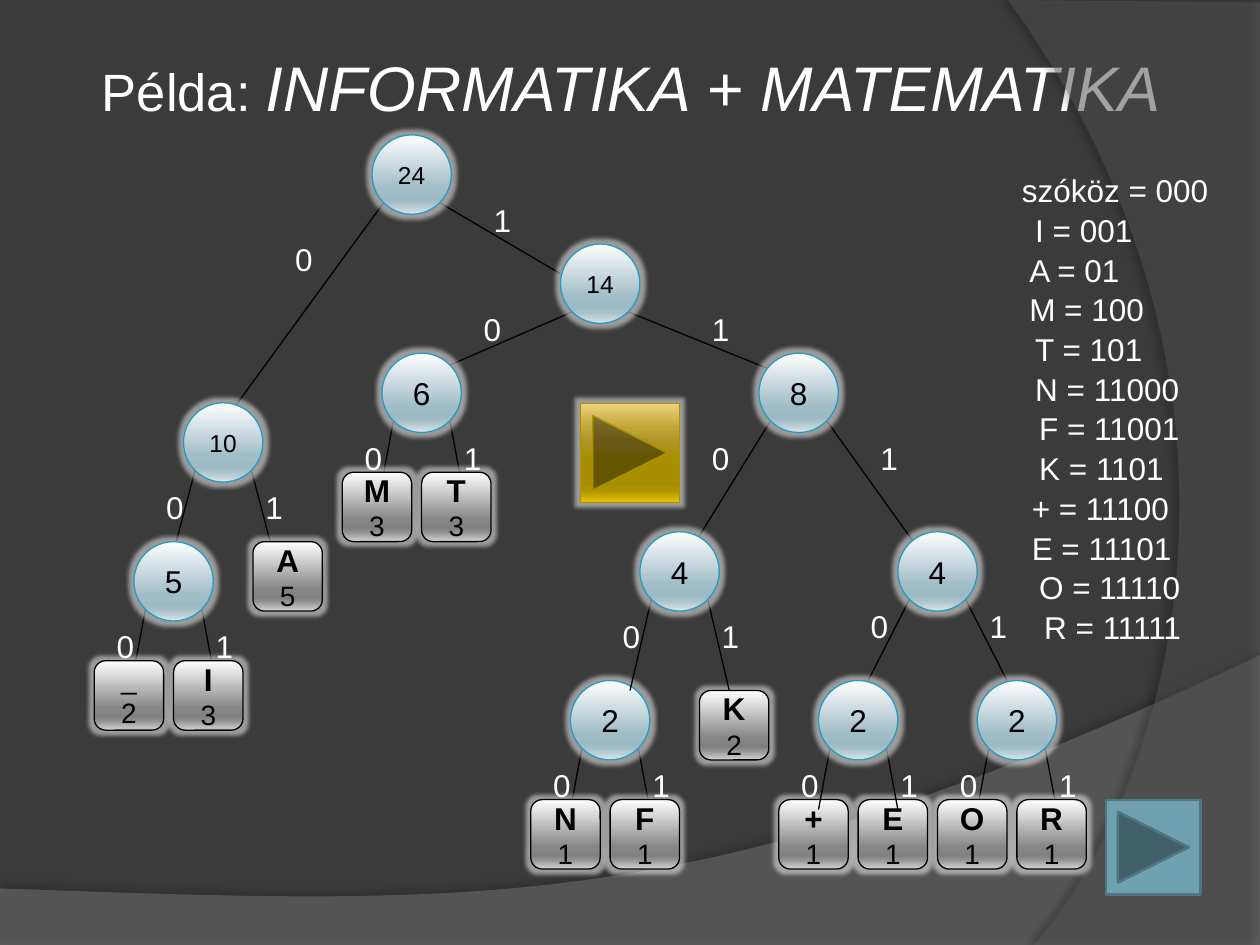
from dataclasses import dataclass

from pptx import Presentation
from pptx.dml.color import RGBColor
from pptx.enum import shapes, text
from pptx.oxml import parse_xml
from pptx.oxml.ns import nsdecls, qn
from pptx.util import Cm, Pt

FONT = "Arial"
BLACK = RGBColor(0x00, 0x00, 0x00)
WHITE = RGBColor(0xFF, 0xFF, 0xFF)
BACKDROP = RGBColor(0x3B, 0x3B, 0x3B)
WAVE_GREY = RGBColor(0x7F, 0x7F, 0x7F)
ARC_GREY = RGBColor(0x5E, 0x5E, 0x5E)
NODE_EDGE = RGBColor(0x23, 0x9B, 0xC2)
TEAL = RGBColor(0x6E, 0xA0, 0xB0)
TEAL_EDGE = RGBColor(0x51, 0x76, 0x82)
GOLD_EDGE = RGBColor(0xAB, 0x92, 0x00)


def ramp(*stops):
    return [(position, RGBColor.from_string(color)) for position, color in stops]


NODE_RAMP = ramp((0, "FEFEFE"), (68, "A0BCC6"), (81, "9CB9C4"), (86, "A7C0C9"), (100, "DAE4E7"))
LEAF_RAMP = ramp((0, "FEFEFE"), (68, "878787"), (81, "818181"), (86, "909090"), (100, "D3D3D3"))
GOLD_RAMP = ramp((0, "EED27E"), (25, "BFA536"), (38, "AF9527"), (55, "A88F00"),
                 (80, "A68D00"), (88, "AF9500"), (100, "E6C100"))

NODE_SIZE = 1.6
LEAF_SIZE = 1.4
EDGE_STARTS = ((0.23, 1.37), (1.37, 1.37))
CODES = [
    ("szóköz = 000", 20.35), ("I = 001", 20.62), ("A = 01", 20.5), ("M = 100", 20.5),
    ("T = 101", 20.62), ("N = 11000", 20.62), ("F = 11001", 20.7), ("K = 1101", 20.7),
    ("+ = 11100", 20.55), ("E = 11101", 20.55), ("O = 11110", 20.7), ("R = 11111", 20.8),
]


@dataclass
class Leaf:
    letter: str
    count: str
    offset: tuple
    entry: tuple = (0.8, 0.2)


@dataclass
class Node:
    count: str
    offset: tuple
    children: tuple
    entry: tuple = (0.8, 0.2)
    bits: tuple = ((-0.6, 1.6), (1.4, 1.6))
    edges_on_top: bool = False


def leaf_pair(left, right):
    return Leaf(*left, (-0.8, 2.4)), Leaf(*right, (0.8, 2.4))


def huffman_tree():
    five = Node("5", (-1, 2.8), leaf_pair("_2", "I3"))
    ten = Node("10", (-3.8, 5.4), (five, Leaf("A", "5", (1.4, 2.8), (0.4, 0.2))), (0.8, 0.4))
    six = Node("6", (-3.6, 2.2), leaf_pair("M3", "T3"), (1, 0.4))
    n_f = Node("2", (-1.4, 3), leaf_pair("N1", "F1"), (1.2, 0.2))
    left_four = Node("4", (-2.4, 3.6), (n_f, Leaf("K", "2", (1.2, 3.2), (0.6, 0))),
                     (1, 0.4), edges_on_top=True)
    plus_e = Node("2", (-1.6, 3), leaf_pair("+1", "E1"), (1, 0), edges_on_top=True)
    o_r = Node("2", (1.6, 3), leaf_pair("O1", "R1"), (0.6, 0))
    right_four = Node("4", (2.8, 3.6), (plus_e, o_r), (0.6, 0.6), ((-0.8, 1.4), (1.6, 1.4)))
    eight = Node("8", (4, 2.2), (left_four, right_four), (0.4, 0.4), ((-1.2, 1.6), (2.2, 1.6)))
    fourteen = Node("14", (3.8, 2.2), (six, eight), (0, 0.6), ((-1.8, 1.2), (2.8, 1.2)))
    return Node("24", (7.5, 2.72), (ten, fourteen), bits=((-1.8, 2), (2.2, 1.2)))


def shift(origin, offset):
    return origin[0] + offset[0], origin[1] + offset[1]


def add_run(paragraph, words, size, color, bold=False, italic=False):
    run = paragraph.add_run()
    run.text = words
    run.font.name = FONT
    run.font.size = Pt(size)
    run.font.bold = bold
    run.font.italic = italic
    run.font.color.rgb = color


def add_effect(shape, xml):
    shape.shadow.inherit = False
    shape.element.spPr.find(qn("a:effectLst")).append(parse_xml(xml))


def add_glow(shape):
    add_effect(shape, f'<a:glow {nsdecls("a")} rad="63500"><a:srgbClr val="{WHITE}">'
                      '<a:alpha val="50000"/></a:srgbClr></a:glow>')


def fill_ramp(shape, stops):
    shape.fill.gradient()
    shape.fill.gradient_angle = 270
    stop_list = shape.element.spPr.find(".//" + qn("a:gsLst"))
    for stop in list(stop_list):
        stop_list.remove(stop)
    for position, color in stops:
        stop_list.append(parse_xml(f'<a:gs {nsdecls("a")} pos="{position * 1000}">'
                                   f'<a:srgbClr val="{color}"/></a:gs>'))


def add_box(slide, kind, corner, size, edge, weight=0.75):
    box = slide.shapes.add_shape(kind, Cm(corner[0]), Cm(corner[1]), Cm(size), Cm(size))
    box.shadow.inherit = False
    box.line.color.rgb = edge
    box.line.width = Pt(weight)
    return box


def add_glossy_box(slide, kind, corner, size, edge, stops):
    box = add_box(slide, kind, corner, size, edge)
    fill_ramp(box, stops)
    add_glow(box)
    frame = box.text_frame
    frame.margin_left = frame.margin_right = frame.margin_top = frame.margin_bottom = 0
    frame.vertical_anchor = text.MSO_ANCHOR.MIDDLE
    frame.paragraphs[0].alignment = text.PP_ALIGN.CENTER
    return box


def add_caption(slide, words, corner, width, wrap):
    caption = slide.shapes.add_textbox(Cm(corner[0]), Cm(corner[1]), Cm(width), Cm(1.02))
    caption.text_frame.word_wrap = wrap
    add_run(caption.text_frame.paragraphs[0], words, 18, WHITE)


def add_edge(slide, start, end):
    edge = slide.shapes.add_connector(shapes.MSO_CONNECTOR.STRAIGHT,
                                      *(Cm(value) for value in start + end))
    edge.line.color.rgb = BLACK
    edge.line.width = Pt(0.75)
    edge.element.spPr.append(parse_xml(f'<a:effectLst {nsdecls("a")}/>'))


def draw_leaf(slide, leaf, corner):
    tile = add_glossy_box(slide, shapes.MSO_SHAPE.ROUNDED_RECTANGLE, corner, LEAF_SIZE, BLACK, LEAF_RAMP)
    paragraph = tile.text_frame.paragraphs[0]
    is_space = leaf.letter == "_"
    add_run(paragraph, leaf.letter, 16 if is_space else 18, BLACK, bold=not is_space)
    paragraph.add_line_break()
    add_run(paragraph, leaf.count, 16, BLACK)


def draw_children(slide, node, corner):
    for child in node.children:
        draw = draw_leaf if isinstance(child, Leaf) else draw_node
        draw(slide, child, shift(corner, child.offset))


def draw_node(slide, node, corner):
    if node.edges_on_top:
        draw_children(slide, node, corner)
    for child, start in zip(node.children, EDGE_STARTS):
        add_edge(slide, shift(corner, start), shift(shift(corner, child.offset), child.entry))
    circle = add_glossy_box(slide, shapes.MSO_SHAPE.OVAL, corner, NODE_SIZE, NODE_EDGE, NODE_RAMP)
    add_run(circle.text_frame.paragraphs[0], node.count, 14 if len(node.count) > 1 else 18, BLACK)
    for bit, offset in zip("01", node.bits):
        add_caption(slide, bit, shift(corner, offset), 0.84, False)
    if not node.edges_on_top:
        draw_children(slide, node, corner)


def bezier(p0, p1, p2, p3, steps=40):
    for t in (step / steps for step in range(steps + 1)):
        weights = ((1 - t) ** 3, 3 * t * (1 - t) ** 2, 3 * t * t * (1 - t), t ** 3)
        yield tuple(sum(w * p[axis] for w, p in zip(weights, (p0, p1, p2, p3))) for axis in (0, 1))


def draw_sweep(slide, corners, curve, color, opacity, shadow_opacity, distance, angle):
    points = [(Cm(x), Cm(y)) for x, y in corners + list(bezier(*curve))]
    builder = slide.shapes.build_freeform(*points[0])
    builder.add_line_segments(points[1:])
    sweep = builder.convert_to_shape()
    sweep.fill.solid()
    sweep.fill.fore_color.rgb = color
    sweep.element.spPr.find(".//" + qn("a:srgbClr")).append(
        parse_xml(f'<a:alpha {nsdecls("a")} val="{opacity * 1000}"/>'))
    sweep.line.fill.background()
    add_effect(sweep, f'<a:outerShdw {nsdecls("a")} blurRad="{Pt(4)}" dist="{Pt(distance)}" '
                      f'dir="{angle * 60000}"><a:srgbClr val="{BLACK}">'
                      f'<a:alpha val="{shadow_opacity * 1000}"/></a:srgbClr></a:outerShdw>')


def draw_title(slide):
    title = slide.shapes.title
    title.left, title.top, title.width, title.height = Cm(1.3), Cm(0.74), Cm(22.86), Cm(2)
    title.text_frame.vertical_anchor = text.MSO_ANCHOR.MIDDLE
    paragraph = title.text_frame.paragraphs[0]
    paragraph.alignment = text.PP_ALIGN.CENTER
    add_run(paragraph, "Példa: ", 30, WHITE)
    add_run(paragraph, "INFORMATIKA + MATEMATIKA", 36, WHITE, italic=True)


def main():
    deck = Presentation()
    deck.slide_width, deck.slide_height = Cm(25.4), Cm(19.05)
    slide = deck.slides.add_slide(deck.slide_layouts[5])
    slide.background.fill.solid()
    slide.background.fill.fore_color.rgb = BACKDROP
    draw_sweep(slide, [(0, 17.91), (0, 19.05), (25.4, 19.05)],
               ((25.4, 13.21), (14.2, 18.52), (9.93, 18.26), (0, 17.91)), WAVE_GREY, 45, 35, 3.5, 270)
    draw_sweep(slide, [(25.4, 0.05), (25.4, 19.05)],
               ((20.85, 19.05), (23.75, 15.72), (25.86, 7.62), (20.32, 0)), ARC_GREY, 40, 45, 4, 180)
    draw_title(slide)
    tree = huffman_tree()
    draw_node(slide, tree, tree.offset)
    for row, (code, left) in enumerate(CODES):
        add_caption(slide, code, (left, 3.33 + 0.8 * row), 4.6, True)
    forward = shapes.MSO_SHAPE.ACTION_BUTTON_FORWARD_OR_NEXT
    next_button = add_box(slide, forward, (22.3, 16.13), 1.9, TEAL_EDGE, 1.5)
    next_button.fill.solid()
    next_button.fill.fore_color.rgb = TEAL
    add_glossy_box(slide, forward, (11.7, 8.13), 2, GOLD_EDGE, GOLD_RAMP)
    deck.save("out.pptx")


if __name__ == "__main__":
    main()
